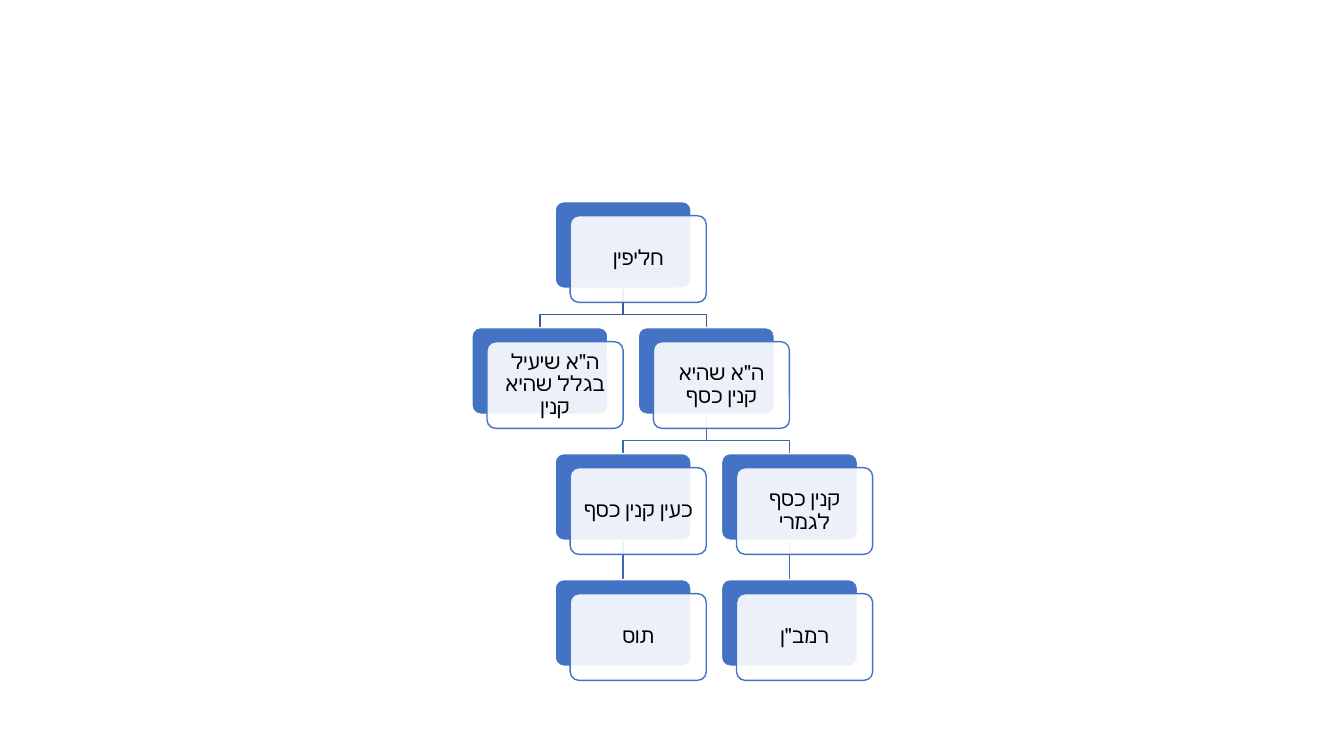
from lxml.etree import SubElement
from pptx import Presentation
from pptx.dml.color import RGBColor
from pptx.enum.lang import MSO_LANGUAGE_ID
from pptx.enum.shapes import MSO_CONNECTOR, MSO_SHAPE
from pptx.enum.text import MSO_ANCHOR, PP_ALIGN
from pptx.oxml.ns import qn
from pptx.util import Inches, Pt

THEME = {
    "card": RGBColor(0x44, 0x72, 0xC4),
    "paper": RGBColor(0xFF, 0xFF, 0xFF),
    "ink": RGBColor(0x00, 0x00, 0x00),
    "upper_link": RGBColor(0x36, 0x5B, 0x9D),
    "lower_link": RGBColor(0x3E, 0x67, 0xB2),
    "font": "Calibri",
    "text_size": Pt(15),
    "line_width": Pt(1),
    "paper_opacity": "90000",
}

LEFT, TOP = Inches(4.68), Inches(2)
COLUMN, ROW = Inches(1.65) // 2, Inches(1.25)
CARD_WIDTH, CARD_HEIGHT = Inches(1.35), Inches(0.86)
SHIFT_X, SHIFT_Y = Inches(0.15), Inches(0.14)
ELBOW_RISE = Inches(0.13)

CARDS = {
    "root": (1, 0, "חליפין"),
    "money": (2, 1, 'ה"א שהיא קנין כסף'),
    "full_money": (3, 2, "קנין כסף לגמרי"),
    "ramban": (3, 3, 'רמב"ן'),
    "like_money": (1, 2, "כעין קנין כסף"),
    "tosafot": (1, 3, "תוס"),
    "acquisition": (0, 1, 'ה"א שיעיל בגלל שהיא קנין'),
}
LINKS = [
    ("root", "acquisition", "upper_link"),
    ("like_money", "tosafot", "lower_link"),
    ("money", "like_money", "lower_link"),
    ("full_money", "ramban", "lower_link"),
    ("money", "full_money", "lower_link"),
    ("root", "money", "upper_link"),
]
FRAME_FORMAT = {
    "word_wrap": True,
    "vertical_anchor": MSO_ANCHOR.MIDDLE,
    "margin_left": Inches(0.06),
    "margin_right": Inches(0.06),
    "margin_top": Inches(0.06),
    "margin_bottom": Inches(0.06),
}
PARA_FORMAT = {"alignment": PP_ALIGN.CENTER, "line_spacing": 0.9}
FONT_FORMAT = {
    "name": THEME["font"],
    "size": THEME["text_size"],
    "language_id": MSO_LANGUAGE_ID.HEBREW,
}


def apply_format(target, values):
    for name, value in values.items():
        setattr(target, name, value)


def add_card(page, left, top, fill, outline):
    card = page.shapes.add_shape(
        MSO_SHAPE.ROUNDED_RECTANGLE, left, top, CARD_WIDTH, CARD_HEIGHT
    )
    card.adjustments[0] = 0.1
    card.shadow.inherit = False
    card.fill.solid()
    card.fill.fore_color.rgb = fill
    card.line.color.rgb = outline
    card.line.width = THEME["line_width"]
    return card


deck = Presentation()
deck.slide_width, deck.slide_height = Inches(13.33), Inches(7.5)
page = deck.slides.add_slide(deck.slide_layouts[6])

straight_links = []
for parent, child, color in LINKS:
    parent_column, parent_row, _ = CARDS[parent]
    child_column, child_row, _ = CARDS[child]
    start_x = LEFT + parent_column * COLUMN + CARD_WIDTH // 2
    start_y = TOP + parent_row * ROW + CARD_HEIGHT
    end_x = LEFT + child_column * COLUMN + CARD_WIDTH // 2
    end_y = TOP + child_row * ROW
    if start_x == end_x:
        link = page.shapes.add_connector(
            MSO_CONNECTOR.STRAIGHT, start_x, start_y, end_x, end_y
        )
        SubElement(link._element.spPr, qn("a:effectLst"))
        straight_links.append((link, parent, child))
    else:
        bend_y = end_y - ELBOW_RISE
        outline = page.shapes.build_freeform(start_x, start_y)
        outline.add_line_segments(
            [(start_x, bend_y), (end_x, bend_y), (end_x, end_y)], close=False
        )
        link = outline.convert_to_shape()
        link.shadow.inherit = False
        link.fill.background()
    link.line.color.rgb = THEME[color]
    link.line.width = THEME["line_width"]

back_cards = {}
for key, (column, row, text) in CARDS.items():
    left, top = LEFT + column * COLUMN, TOP + row * ROW
    back_cards[key] = add_card(page, left, top, THEME["card"], THEME["paper"])
    box = add_card(
        page, left + SHIFT_X, top + SHIFT_Y, THEME["paper"], THEME["card"]
    )
    paper = box._element.spPr.find(qn("a:solidFill"))[0]
    SubElement(paper, qn("a:alpha"), val=THEME["paper_opacity"])
    apply_format(box.text_frame, FRAME_FORMAT)
    para = box.text_frame.paragraphs[0]
    apply_format(para, PARA_FORMAT)
    para._p.get_or_add_pPr().set("rtl", "1")
    span = para.add_run()
    span.text = text
    apply_format(span.font, FONT_FORMAT)
    span.font.color.rgb = THEME["ink"]

for link, parent, child in straight_links:
    link.begin_connect(back_cards[parent], 2)
    link.end_connect(back_cards[child], 0)

deck.save("out.pptx")
